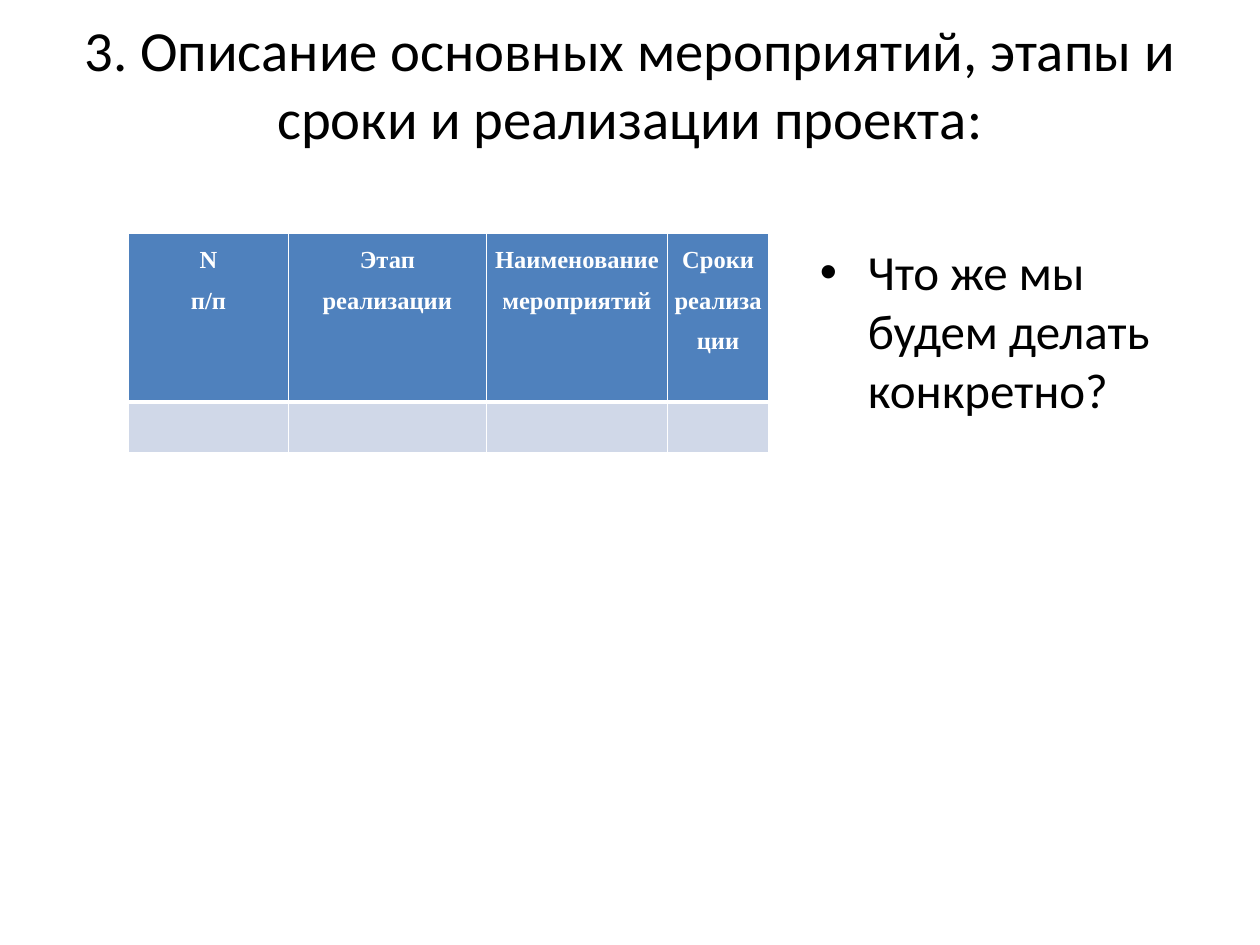
"""Build the slide on project activities, stages and deadlines."""
from lxml import etree
from pptx import Presentation
from pptx.dml.color import RGBColor
from pptx.enum.text import MSO_ANCHOR, PP_ALIGN
from pptx.oxml.ns import qn
from pptx.util import Inches, Pt

CENTER = PP_ALIGN.CENTER
MIDDLE = MSO_ANCHOR.MIDDLE
BLACK = RGBColor(0x00, 0x00, 0x00)
WHITE = RGBColor(0xFF, 0xFF, 0xFF)
HEADER_BLUE = RGBColor(0x4F, 0x81, 0xBD)
BAND_BLUE = RGBColor(0xD0, 0xD8, 0xE8)
TITLE_ONLY = 5


class SlideBuilder:
    """Holds the style and the current slide, with a method per kind of element."""

    body_font = "Calibri"
    table_font = "Times New Roman"

    def __init__(self, slide):
        self.slide = slide

    def add_run(self, paragraph, text, size, font, color, bold=False):
        run = paragraph.add_run()
        run.text = text
        run.font.size = Pt(size)
        run.font.name = font
        run.font.bold = bold
        run.font.color.rgb = color

    def title(self, text, left, top, width, height):
        heading = self.slide.shapes.title
        heading.left, heading.top = Inches(left), Inches(top)
        heading.width, heading.height = Inches(width), Inches(height)
        heading.text_frame.vertical_anchor = MIDDLE
        paragraph = heading.text_frame.paragraphs[0]
        paragraph.alignment = CENTER
        self.add_run(paragraph, text, 32.4, self.body_font, BLACK)
        paragraph.add_line_break()
        paragraph.font.size = Pt(32.4)

    def bullet(self, text, left, top, width, height):
        box = self.slide.shapes.add_textbox(
            Inches(left), Inches(top), Inches(width), Inches(height))
        box.text_frame.word_wrap = True
        paragraph = box.text_frame.paragraphs[0]
        self.add_run(paragraph, text, 28, self.body_font, BLACK)
        properties = paragraph._p.get_or_add_pPr()
        indent = Inches(0.38)
        properties.set("marL", str(indent))
        properties.set("indent", str(-indent))
        before = etree.SubElement(properties, qn("a:spcBef"))
        etree.SubElement(before, qn("a:spcPct"), val="20000")
        etree.SubElement(properties, qn("a:buFont"), typeface="Arial")
        etree.SubElement(properties, qn("a:buChar"), char="•")

    def cell_borders(self, cell, top, bottom):
        properties = cell._tc.get_or_add_tcPr()
        widths = {"lnL": 1, "lnR": 1, "lnT": top, "lnB": bottom}
        for position, (side, width) in enumerate(widths.items()):
            line = etree.Element(qn(f"a:{side}"), w=str(Pt(width)))
            fill = etree.SubElement(line, qn("a:solidFill"))
            etree.SubElement(fill, qn("a:srgbClr"), val=str(WHITE))
            properties.insert(position, line)

    def header_cell(self, cell, lines):
        cell.margin_left = cell.margin_right = Inches(0.05)
        cell.margin_top = cell.margin_bottom = 0
        frame = cell.text_frame
        for number, line in enumerate(lines):
            paragraph = frame.add_paragraph() if number else frame.paragraphs[0]
            paragraph.alignment = CENTER
            paragraph.line_spacing = 1.5
            self.add_run(paragraph, line, 14, self.table_font, WHITE, bold=True)

    def table(self, headers, left, top, column_widths, row_heights):
        grid = self.slide.shapes.add_table(
            len(row_heights), len(headers), Inches(left), Inches(top),
            Inches(sum(column_widths)), Inches(sum(row_heights))).table
        for column, width in zip(grid.columns, column_widths):
            column.width = Inches(width)
        for row, height in zip(grid.rows, row_heights):
            row.height = Inches(height)
        for column, lines in enumerate(headers):
            header, entry = grid.cell(0, column), grid.cell(1, column)
            self.header_cell(header, lines)
            for cell, color, edges in ((header, HEADER_BLUE, (1, 3)),
                                       (entry, BAND_BLUE, (3, 1))):
                cell.fill.solid()
                cell.fill.fore_color.rgb = color
                self.cell_borders(cell, *edges)


def main():
    presentation = Presentation()
    presentation.slide_width = Inches(10)
    presentation.slide_height = Inches(7.5)
    layout = presentation.slide_layouts[TITLE_ONLY]
    builder = SlideBuilder(presentation.slides.add_slide(layout))
    builder.title(
        "3. Описание основных мероприятий, этапы и сроки и реализации проекта:",
        0.5, 0.3, 9, 1.25)
    stage_headers = [["N", "п/п"], ["Этап реализации"],
                     ["Наименование мероприятий"], ["Сроки реализации"]]
    builder.table(stage_headers, 1.02, 1.85, [1.27, 1.57, 1.44, 0.8], [1.34, 0.4])
    builder.bullet("Что же мы будем делать конкретно?", 6.41, 1.87, 3.4, 2.66)
    presentation.save("out.pptx")


if __name__ == "__main__":
    main()
